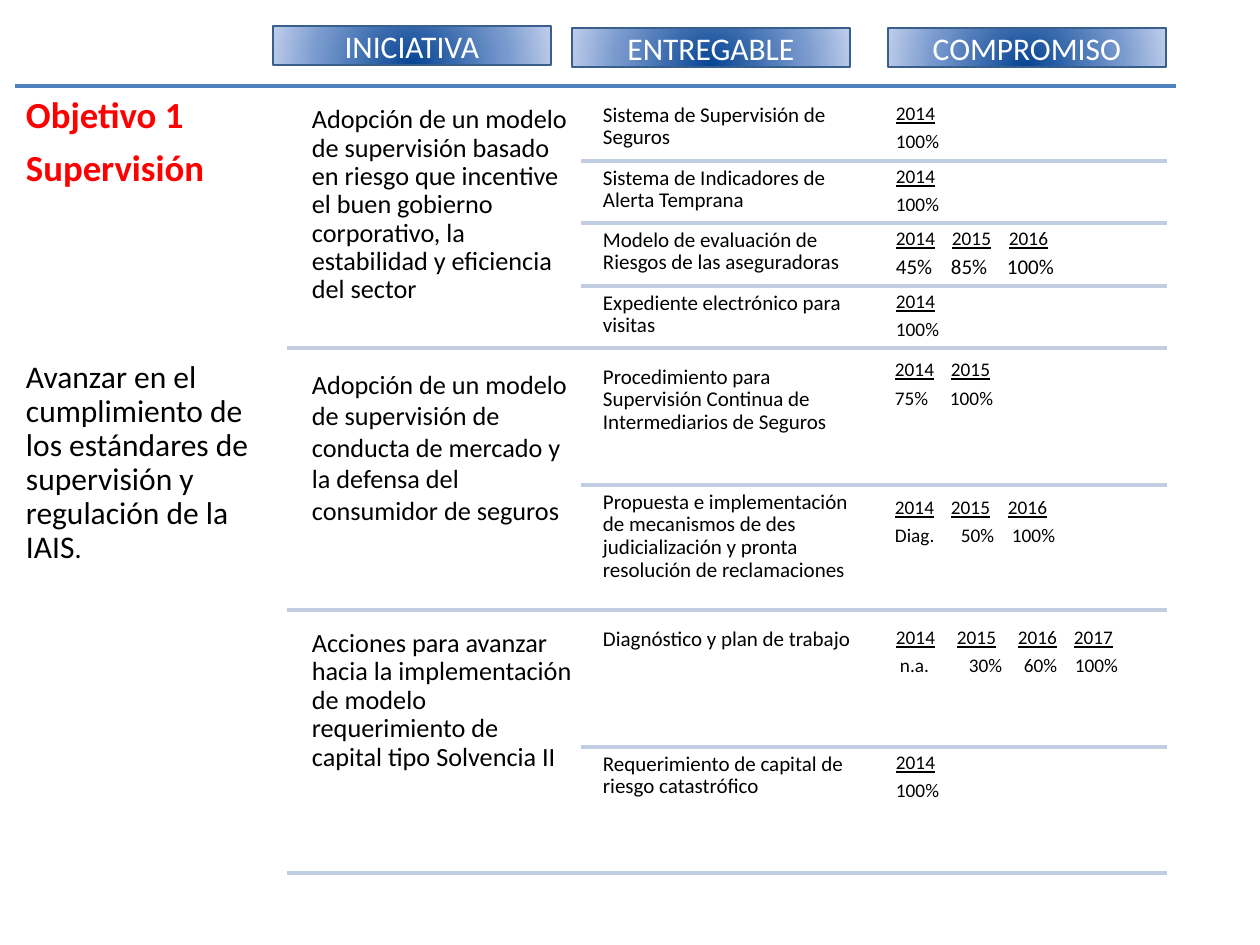
"""Build the slide of initiatives, deliverables and commitments for the supervision objective."""
from dataclasses import dataclass

from lxml.etree import SubElement
from pptx import Presentation
from pptx.dml.color import RGBColor
from pptx.enum.shapes import MSO_CONNECTOR, MSO_SHAPE
from pptx.enum.text import MSO_ANCHOR, PP_ALIGN
from pptx.oxml import parse_xml
from pptx.oxml.ns import nsdecls, qn
from pptx.util import Pt

PX = 914400 / 126
FONT = "Calibri"
COLORS = {
    "black": "000000",
    "white": "FFFFFF",
    "red": "FF0000",
    "top_rule": "4F81BD",
    "row_rule": "C2CDE1",
    "border": "395F8D",
    "dark": "064493",
    "mid": "799ACE",
    "light": "BACAE9",
}


@dataclass(frozen=True)
class Run:
    text: str
    size: int
    color: str = "black"
    bold: bool = False
    underline: bool = False


@dataclass(frozen=True)
class Para:
    runs: tuple[Run, ...]
    tabs: tuple[int, ...] = ()
    before: int = 0
    line: float = 0.9


@dataclass(frozen=True)
class Block:
    x: int
    y: int
    w: int
    h: int
    inset: int
    paras: tuple[Para, ...]


@dataclass(frozen=True)
class Rule:
    x1: int
    x2: int
    y: int
    color: str = "row_rule"


@dataclass(frozen=True)
class Header:
    text: str
    x: int
    y: int


def emu(px: int) -> int:
    return round(px * PX)


def rgb(name: str) -> RGBColor:
    return RGBColor.from_string(COLORS[name])


def add_run(p, run: Run) -> None:
    r = p.add_run()
    r.text = run.text
    r.font.name = FONT
    r.font.size = Pt(run.size)
    r.font.bold = run.bold
    r.font.underline = run.underline
    r.font.color.rgb = rgb(run.color)


def add_tabs(p, stops: tuple[int, ...]) -> None:
    tab_list = SubElement(p._p.get_or_add_pPr(), qn("a:tabLst"))
    for stop in stops:
        SubElement(tab_list, qn("a:tab"), pos=str(emu(stop)), algn="l")


def add_block(slide, block: Block) -> None:
    s = slide.shapes.add_textbox(*map(emu, (block.x, block.y, block.w, block.h)))
    tf = s.text_frame
    tf.word_wrap = True
    tf.margin_left = tf.margin_right = tf.margin_top = tf.margin_bottom = emu(block.inset)
    for i, para in enumerate(block.paras):
        p = tf.add_paragraph() if i else tf.paragraphs[0]
        p.line_spacing = para.line
        p.space_after = Pt(round(para.runs[0].size * 0.35, 1))
        if para.before:
            p.space_before = Pt(para.before)
        if para.tabs:
            add_tabs(p, para.tabs)
        for run in para.runs:
            add_run(p, run)


def add_rule(slide, rule: Rule) -> None:
    s = slide.shapes.add_connector(
        MSO_CONNECTOR.STRAIGHT, *map(emu, (rule.x1, rule.y, rule.x2, rule.y)))
    s.line.color.rgb = rgb(rule.color)
    s.line.width = Pt(2)
    SubElement(s._element.spPr, qn("a:effectLst"))


def add_header(slide, header: Header) -> None:
    s = slide.shapes.add_shape(
        MSO_SHAPE.RECTANGLE, *map(emu, (header.x, header.y, 278, 39)))
    s.shadow.inherit = False
    stops = "".join(
        f'<a:gs pos="{pos}000"><a:srgbClr val="{COLORS[name]}"/></a:gs>'
        for pos, name in ((0, "dark"), (68, "mid"), (100, "light")))
    s._element.spPr.find(qn("a:prstGeom")).addnext(parse_xml(
        f'<a:gradFill {nsdecls("a")} rotWithShape="1"><a:gsLst>{stops}</a:gsLst>'
        '<a:path path="circle"><a:fillToRect l="50000" t="130000" r="50000" b="-30000"/>'
        '</a:path></a:gradFill>'))
    s.line.color.rgb = rgb("border")
    s.line.width = Pt(0.75)
    tf = s.text_frame
    tf.vertical_anchor = MSO_ANCHOR.MIDDLE
    p = tf.paragraphs[0]
    p.alignment = PP_ALIGN.CENTER
    add_run(p, Run(header.text, 18, "white"))


def years(text: str, *tabs: int) -> Para:
    return Para((Run(text, 11, underline=True),), tabs)


def shares(text: str, *tabs: int, size: int = 11) -> Para:
    return Para((Run(text, size),), tabs)


def initiative(y: int, text: str, line: float = 0.9) -> Block:
    return Block(304, y, 277, 249, 8, (Para((Run(text, 15),), line=line),))


def deliverable(y: int, h: int, text: str) -> Block:
    return Block(597, y, 277, h, 6, (Para((Run(text, 12),)),))


def commitment(y: int, *paras: Para, x: int = 890) -> Block:
    return Block(x, y, 278, 62, 6, paras)


DONE_2014 = (years("2014"), shares("100%"))
HEADERS = (Header("INICIATIVA", 273, 26), Header("ENTREGABLE", 572, 28),
           Header("COMPROMISO", 888, 28))
RULES = (
    Rule(15, 1176, 86, "top_rule"),
    *(Rule(581, 1167, y) for y in (161, 223, 286, 485, 747)),
    *(Rule(287, 1167, y) for y in (348, 610, 873)),
)
BLOCKS = (
    Block(15, 86, 272, 799, 11, (
        Para((Run("Objetivo 1", 21, "red", bold=True),)),
        Para((Run("Supervisión", 21, "red", bold=True),)),
        Para((Run("Avanzar en el cumplimiento de los estándares de supervisión y "
                  "regulación de la IAIS", 18), Run(".", 16)), before=91),
    )),
    initiative(98, "Adopción de un modelo de supervisión basado en riesgo que incentive el "
                   "buen gobierno corporativo, la estabilidad y eficiencia del sector"),
    deliverable(98, 62, "Sistema de Supervisión de Seguros"),
    commitment(98, *DONE_2014),
    deliverable(161, 62, "Sistema de Indicadores de Alerta Temprana"),
    commitment(161, *DONE_2014),
    deliverable(223, 62, "Modelo de evaluación de Riesgos de las aseguradoras"),
    commitment(223, years("2014\t2015\t2016", 56, 113),
               shares("45%\t85%\t100%", 55, 111, size=12)),
    deliverable(286, 62, "Expediente electrónico para visitas"),
    commitment(286, *DONE_2014),
    initiative(360, "Adopción de un modelo de supervisión de conducta de mercado y la "
                    "defensa del consumidor de seguros", line=1.0),
    deliverable(360, 125, "Procedimiento para Supervisión Continua de Intermediarios de Seguros"),
    commitment(354, years("2014\t2015", 56), x=889),
    commitment(383, shares("75%\t100%", 55), x=889),
    deliverable(485, 125, "Propuesta e implementación de mecanismos de des judicialización "
                          "y pronta resolución de reclamaciones"),
    commitment(492, years("2014\t2015\t2016", 56, 113),
               shares("Diag.\t50%\t100%", 66, 117), x=889),
    initiative(622, "Acciones para avanzar hacia la implementación de modelo requerimiento "
                    "de capital tipo Solvencia II"),
    deliverable(622, 125, "Diagnóstico y plan de trabajo"),
    commitment(622, years("2014\t2015\t2016\t2017", 61, 122, 178),
               shares("\tn.a.\t30%\t60%\t100%", 4, 73, 128, 179)),
    deliverable(747, 125, "Requerimiento de capital de riesgo catastrófico"),
    commitment(747, *DONE_2014),
)


def main() -> None:
    prs = Presentation()
    prs.slide_width, prs.slide_height = emu(1260), emu(945)
    slide = prs.slides.add_slide(prs.slide_layouts[6])
    for rule in RULES:
        add_rule(slide, rule)
    for block in BLOCKS:
        add_block(slide, block)
    for header in HEADERS:
        add_header(slide, header)
    prs.save("out.pptx")


if __name__ == "__main__":
    main()
